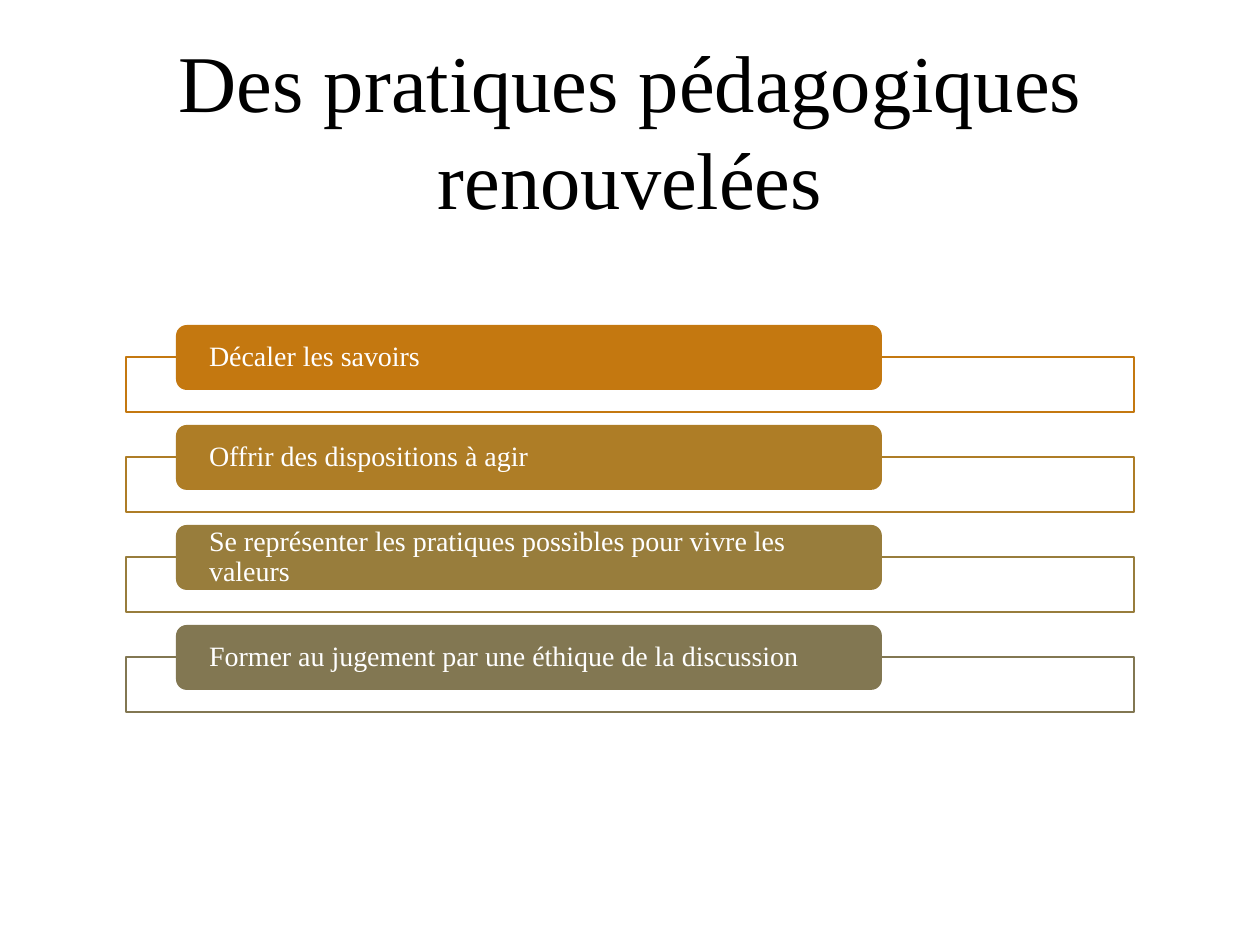
from pptx import Presentation
from pptx.dml.color import RGBColor
from pptx.enum.shapes import MSO_SHAPE
from pptx.enum.text import MSO_ANCHOR, MSO_AUTO_SIZE, PP_ALIGN
from pptx.oxml.ns import qn
from pptx.util import Emu, Pt
from lxml.etree import SubElement

EMU_PER_PX = 914400 / 126
FONT = "Times New Roman"
PRACTICES = [
    ("Décaler les savoirs", "C47810"),
    ("Offrir des dispositions à agir", "AE7D26"),
    ("Se représenter les pratiques possibles pour vivre les valeurs", "987D3C"),
    ("Former au jugement par une éthique de la discussion", "827752"),
]
FIRST_TOP, PITCH = 325, 100


def px(length):
    """Turn a length in px into EMU."""
    return Emu(round(length * EMU_PER_PX))


def color(hex_code):
    """Turn a hex string into a colour."""
    return RGBColor.from_string(hex_code)


def set_attributes(target, values):
    """Set each attribute of the target from a dict."""
    for attribute, value in values.items():
        setattr(target, attribute, value)


def write_text(holder, text, size, hex_code, align, inset, spacing):
    """Write one formatted paragraph, centred vertically."""
    frame = holder.text_frame
    set_attributes(frame, {
        "text": text, "word_wrap": True, "auto_size": MSO_AUTO_SIZE.NONE,
        "vertical_anchor": MSO_ANCHOR.MIDDLE,
        "margin_left": px(inset), "margin_right": px(inset),
        "margin_top": 0, "margin_bottom": 0,
    })
    paragraph = frame.paragraphs[0]
    set_attributes(paragraph, {"alignment": align, "line_spacing": spacing})
    set_attributes(paragraph.font, {"name": FONT, "size": Pt(size)})
    paragraph.font.color.rgb = color(hex_code)


def add_title(slide, text):
    """Place and format the title placeholder."""
    title = slide.shapes.title
    set_attributes(title, {"left": px(126), "top": px(69),
                           "width": px(1008), "height": px(120)})
    write_text(title, text, 46, "000000", PP_ALIGN.CENTER, 13, 1.0)


def add_box(slide, preset, box, fill):
    """Add a preset shape with a solid fill and no shadow."""
    shape = slide.shapes.add_shape(preset, *map(px, box))
    shape.shadow.inherit = False
    shape.fill.solid()
    shape.fill.fore_color.rgb = color(fill)
    return shape


def add_frame(slide, top, hex_code):
    """Add the wide outlined frame behind a practice label."""
    frame = add_box(slide, MSO_SHAPE.RECTANGLE, (126, top, 1008, 55), "FFFFFF")
    frame.line.color.rgb = color(hex_code)
    frame.line.width = Pt(1)
    white = frame.fill._xPr.find(qn("a:solidFill"))[0]
    SubElement(white, qn("a:alpha"), val="90000")


def add_label(slide, top, text, hex_code):
    """Add the rounded label that names a practice."""
    label = add_box(slide, MSO_SHAPE.ROUNDED_RECTANGLE, (176, top, 706, 65), hex_code)
    label.line.fill.background()
    write_text(label, text, 16, "FFFFFF", PP_ALIGN.LEFT, 30, 0.9)


def main():
    """Build and save the slide."""
    presentation = Presentation()
    set_attributes(presentation, {"slide_width": px(1260), "slide_height": px(945)})
    slide = presentation.slides.add_slide(presentation.slide_layouts[5])
    add_title(slide, "Des pratiques pédagogiques renouvelées")
    for row, (practice, hex_code) in enumerate(PRACTICES):
        top = FIRST_TOP + row * PITCH
        add_frame(slide, top + 32, hex_code)
        add_label(slide, top, practice, hex_code)
    presentation.save("out.pptx")


if __name__ == "__main__":
    main()
